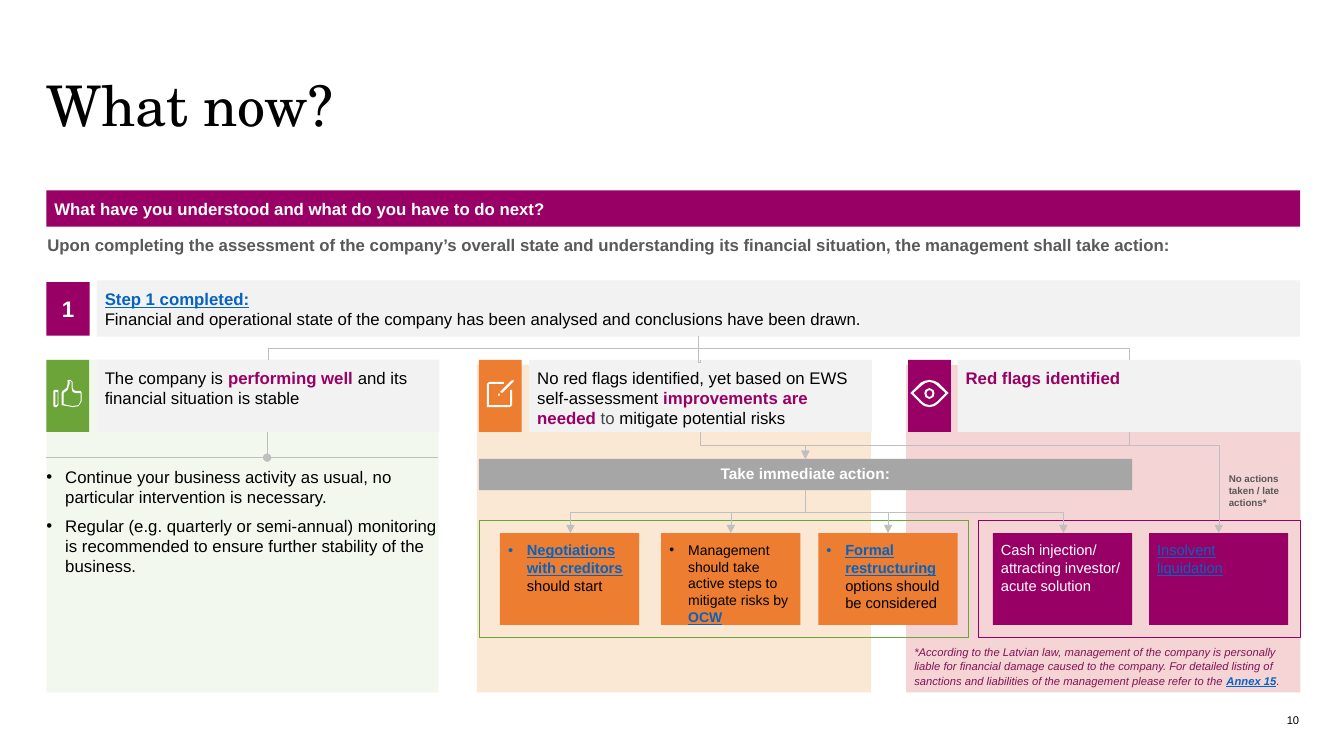
from pptx import Presentation
from pptx.dml.color import RGBColor
from pptx.enum.shapes import MSO_CONNECTOR, MSO_SHAPE
from pptx.enum.text import MSO_ANCHOR, MSO_AUTO_SIZE, PP_ALIGN
from pptx.oxml.ns import qn
from pptx.util import Pt
from lxml import etree

RECTANGLE = MSO_SHAPE.RECTANGLE
STRAIGHT, ELBOW = MSO_CONNECTOR.STRAIGHT, MSO_CONNECTOR.ELBOW
TOP, MIDDLE = MSO_ANCHOR.TOP, MSO_ANCHOR.MIDDLE
LEFT, CENTER, RIGHT = PP_ALIGN.LEFT, PP_ALIGN.CENTER, PP_ALIGN.RIGHT
NO_AUTOFIT = MSO_AUTO_SIZE.NONE

COLORS = {
    "plum": "990066", "green": "6BA439", "orange": "ED7D31", "white": "FFFFFF",
    "black": "000000", "light": "F2F2F2", "gray": "A6A6A6", "line": "BFBFBF",
    "dark": "595959", "charcoal": "464646", "link": "0563C1", "note": "831355",
    "pink": "C00000", "peach": "E57100", "mint": "E2F0D9",
}
NO_INSETS = (0, 0, 0, 0)
DEFAULT_INSETS = (7.2, 3.6, 7.2, 3.6)
CARD_INSETS = (5.76, 5.76, 5.4, 5.76)

THUMB = [
    [(5, 10), (1, 10), (0, 11), (0, 26), (1, 27), (3, 27), (5, 25), (5, 11)],
    [(2, 25), (2, 12), (4, 12), (4, 24), (3, 25)],
    [(19, 26), (14, 25), (10, 24), (10, 13), (14, 10), (16, 4), (16, 1), (17, 1), (18, 2),
     (18, 8), (19, 12), (22, 13), (27, 13), (27, 21), (25, 25)],
    [(26, 11), (22, 11), (20, 10), (19, 8), (19, 2), (17, 0), (14, 0), (14, 4), (13, 8),
     (9, 11), (8, 12), (8, 25), (14, 26), (19, 27), (25, 26), (28, 21), (28, 13), (27, 11)],
]
PENCIL = [
    [(23, 25), (2, 25), (2, 4), (17, 4), (17, 2), (2, 2), (0, 4), (0, 27), (23, 27),
     (25, 25), (25, 10), (23, 10)],
    [(11, 15), (12, 16), (13, 15), (12, 13)],
    [(26, 0), (24, 1), (13, 12), (15, 13), (27, 1)],
]
EYE = [
    [(28, 3), (24, 1), (19, 0), (14, 1), (10, 3), (0, 13), (10, 23), (14, 26), (19, 27),
     (24, 26), (28, 23), (38, 13)],
    [(26, 22), (23, 24), (19, 25), (15, 24), (12, 22), (3, 13), (12, 5), (15, 3), (19, 2),
     (23, 3), (26, 5), (35, 13)],
    [(19, 8), (15, 10), (14, 13), (15, 17), (19, 19), (23, 17), (24, 13), (23, 10)],
    [(19, 10), (17, 11), (16, 13), (17, 16), (19, 17), (21, 16), (22, 13), (21, 11)],
]


class SlideBuilder:
    def __init__(self, page):
        self.page = page
        self.shapes = page.shapes

    def color(self, name):
        return RGBColor.from_string(COLORS[name])

    def style(self, font, color, flags=""):
        font.color.rgb = self.color(color)
        font.bold = "b" in flags
        font.italic = "i" in flags
        font.underline = "u" in flags

    def set_text(self, box, paragraphs, size, anchor=TOP, align=LEFT, insets=DEFAULT_INSETS,
                 bullet=False, spacing=1, after=0, font="Arial"):
        frame = box.text_frame
        frame.word_wrap = True
        frame.auto_size = NO_AUTOFIT
        frame.vertical_anchor = anchor
        frame.margin_left, frame.margin_top, frame.margin_right, frame.margin_bottom = map(Pt, insets)
        for index, spans in enumerate(paragraphs):
            para = frame.add_paragraph() if index else frame.paragraphs[0]
            para.alignment = align
            para.line_spacing = spacing
            para.space_before, para.space_after = Pt(0), Pt(after)
            if bullet:
                properties = para._p.get_or_add_pPr()
                properties.set("marL", str(Pt(13.5)))
                properties.set("indent", str(Pt(-13.5)))
                etree.SubElement(properties, qn("a:buFont"), typeface="Arial")
                etree.SubElement(properties, qn("a:buChar"), char="•")
            para.font.name, para.font.size = font, Pt(size)
            for text, *look in spans:
                span = para.add_run()
                span.text = text
                self.style(para.font if len(spans) == 1 else span.font, *look)

    def box(self, at, fill=None, line=None, opacity=None):
        box = self.shapes.add_shape(RECTANGLE, *map(Pt, at))
        self.paint(box, fill, line)
        if opacity:
            tint = box._element.spPr.find(qn("a:solidFill")).find(qn("a:srgbClr"))
            etree.SubElement(tint, qn("a:alpha"), val=str(opacity * 1000))
        return box

    def paint(self, shape, fill, line=None):
        shape.shadow.inherit = False
        if fill:
            shape.fill.solid()
            shape.fill.fore_color.rgb = self.color(fill)
        else:
            shape.fill.background()
        if line:
            shape.line.color.rgb = self.color(line)
            shape.line.width = Pt(0.25)
        else:
            shape.line.fill.background()

    def label(self, at, paragraphs, size, **options):
        self.set_text(self.shapes.add_textbox(*map(Pt, at)), paragraphs, size, **options)

    def placeholder(self, shape, at, paragraphs, size, **options):
        shape.left, shape.top, shape.width, shape.height = map(Pt, at)
        shape.element.getparent().append(shape.element)
        self.set_text(shape, paragraphs, size, **options)

    def icon(self, left, top, contours):
        builder = None
        for contour in contours:
            if builder is None:
                builder = self.shapes.build_freeform(*contour[0], scale=Pt(0.72))
            else:
                builder.move_to(*contour[0])
            builder.add_line_segments(contour[1:], close=True)
        self.paint(builder.convert_to_shape(Pt(left), Pt(top)), "white")

    def line(self, start, end, tail=None, kind=STRAIGHT):
        connector = self.shapes.add_connector(kind, *map(Pt, start + end))
        connector.line.color.rgb = self.color("line")
        connector.line.width = Pt(0.25)
        properties = connector._element.spPr
        if tail:
            etree.SubElement(properties.find(qn("a:ln")), qn("a:tailEnd"), type=tail)
        etree.SubElement(properties, qn("a:effectLst"))
        return connector

    def elbow(self, start, end, tail=None, bend=0.5):
        (x1, y1), (x2, y2) = start, end
        middle_x, middle_y = (x1 + x2) / 2, (y1 + y2) / 2
        half_drop, half_run = (y2 - y1) / 2, abs(x2 - x1) / 2
        side = 1 if x2 > x1 else -1
        connector = self.line((middle_x + side * half_drop, middle_y - half_run),
                              (middle_x - side * half_drop, middle_y + half_run), tail, ELBOW)
        properties = connector._element.spPr
        properties.find(qn("a:xfrm")).set("rot", str((270 if side > 0 else 90) * 60000))
        geometry = properties.find(qn("a:prstGeom"))
        guides = geometry.find(qn("a:avLst"))
        if guides is None:
            guides = etree.SubElement(geometry, qn("a:avLst"))
        etree.SubElement(guides, qn("a:gd"), name="adj1", fmla=f"val {round(bend * 100000)}")
        if side < 0:
            properties.find(qn("a:xfrm")).attrib.pop("flipH", None)


def main():
    deck = Presentation()
    deck.slide_width, deck.slide_height = Pt(960), Pt(540)
    page = deck.slides.add_slide(deck.slide_layouts[1])
    build = SlideBuilder(page)

    build.box((647.3, 260.6, 281.5, 234), "pink", opacity=17)
    build.box((340.6, 260.6, 281.5, 234), "peach", opacity=17)
    build.box((33.1, 257, 280.1, 237.6), "mint", opacity=41)
    build.box((698.4, 371.5, 230.4, 83.5), line="plum")
    build.box((342, 371.5, 349.9, 83.5), line="green")

    build.placeholder(page.shapes.title, (33.1, 25.9, 895, 103.7), [[("What now?", "black")]], 40,
                      anchor=MIDDLE, insets=NO_INSETS, spacing=0.9, font="TeX Gyre Schola")
    build.set_text(build.box((33.1, 136.1, 895.7, 25.9), "plum"),
                   [[("What have you understood and what do you have to do next?", "white", "b")]], 12,
                   anchor=MIDDLE, insets=(5.76, 2.88, 5.76, 2.88))
    build.label((33.84, 167, 895, 14.4), [[(
        "Upon completing the assessment of the company’s overall state and understanding its "
        "financial situation, the management shall take action:", "dark", "b")]], 12,
        insets=NO_INSETS, spacing=1.07, after=8)

    build.set_text(build.box((69.1, 200.2, 859.7, 40.3), "light"), [
        [("Step 1 completed:", "link", "bu")],
        [("Financial and operational state of the company has been analysed and conclusions "
          "have been drawn.", "black")]], 12, anchor=MIDDLE, insets=CARD_INSETS)
    build.set_text(build.box((33.1, 201.6, 31, 38.2), "plum"), [[("1", "white", "b")]], 16,
                   anchor=MIDDLE, align=CENTER)

    outcomes = [
        (33.1, 69.1, "green", THUMB, 38.2, [
            ("The company is ", "black"), ("performing well ", "plum", "b"),
            ("and its financial situation is stable", "black")]),
        (342, 378, "orange", PENCIL, 347.8, [
            ("No red flags identified, yet based on EWS self-assessment ", "black"),
            ("improvements are needed ", "plum", "b"), ("to ", "charcoal"),
            ("mitigate potential risks", "black")]),
        (648.7, 684, "plum", EYE, 650.2, [("Red flags identified", "plum", "b")]),
    ]
    for tile_left, card_left, color, contours, icon_left, spans in outcomes:
        build.box((tile_left, 257, 30.6, 51.5), color)
        build.set_text(build.box((card_left, 257, 244.8, 51.5), "light"), [spans], 12, insets=CARD_INSETS)
        build.icon(icon_left, 271.4, contours)

    build.placeholder(page.placeholders[1], (33.1, 327.6, 280.1, 148.3), [
        [("Continue your business activity as usual, no particular intervention is necessary.", "black")],
        [("Regular (e.g. quarterly or semi-annual) monitoring is recommended to ensure further "
          "stability of the business.", "black")]], 12,
        insets=(0, 5.76, 0, 5.76), bullet=True, after=6)
    build.set_text(build.box((342, 327.8, 466.6, 22.3), "gray"),
                   [[("Take immediate action:", "white", "b")]], 11, align=CENTER)

    actions = [
        (357.1, "orange", 10.5, [("Negotiations with creditors", "link", "bu"), (" ", "link", "u"),
                                 ("should start", "black")]),
        (472.3, "orange", 10, [("Management should take active steps to mitigate risks by ", "black"),
                               ("OCW", "link", "bu")]),
        (584.6, "orange", 10.5, [("Formal restructuring ", "link", "bu"),
                                 ("options should be considered", "black")]),
        (709.2, "plum", 10.5, [("Cash injection/ attracting investor/ acute solution", "white")]),
        (820.8, "plum", 10.5, [("Insolvent liquidation", "link", "u")]),
    ]
    for left, color, size, spans in actions:
        build.set_text(build.box((left, 380.9, 99.4, 65.5), color), [spans], size,
                       insets=(5.76,) * 4, bullet=color == "orange")

    build.line((33.1, 326.9), (313.2, 326.9))
    build.line((190.8, 308.9), (190.8, 326.9), "oval")
    for x, bend in ((191.5, 0.5), (806.4, 0.5), (500.4, 1.1)):
        build.elbow((499, 240), (x, 257), bend=bend)
    for x in (500.4, 806.4):
        build.elbow((x, 308.9), (575.3, 327.8), "triangle")
    build.elbow((806.4, 308.9), (870.5, 380.9), "triangle", 0.13)
    for x in (407.5, 522, 634.3, 759.6):
        build.elbow((575.3, 350.3), (x, 380.9), "triangle")

    build.label((877.7, 337.7, 51.1, 25.2), [[("No actions taken / late actions*", "dark", "b")]], 7,
                insets=NO_INSETS)
    build.label((647.3, 456.5, 280.1, 38.2), [[
        ("*According to the Latvian law, management of the company is personally liable for "
         "financial damage caused to the company. For detailed listing of sanctions and liabilities "
         "of the management please refer to the ", "note", "i"),
        ("Annex 15", "link", "biu"), (".", "note", "i")]], 8,
        anchor=MIDDLE, insets=(5.76, 3.6, 5.76, 3.6), spacing=1.07)
    build.label((712.1, 509.8, 216, 9.4), [[("10", "black")]], 8,
                anchor=MIDDLE, align=RIGHT, insets=NO_INSETS)

    deck.save("out.pptx")


if __name__ == "__main__":
    main()
